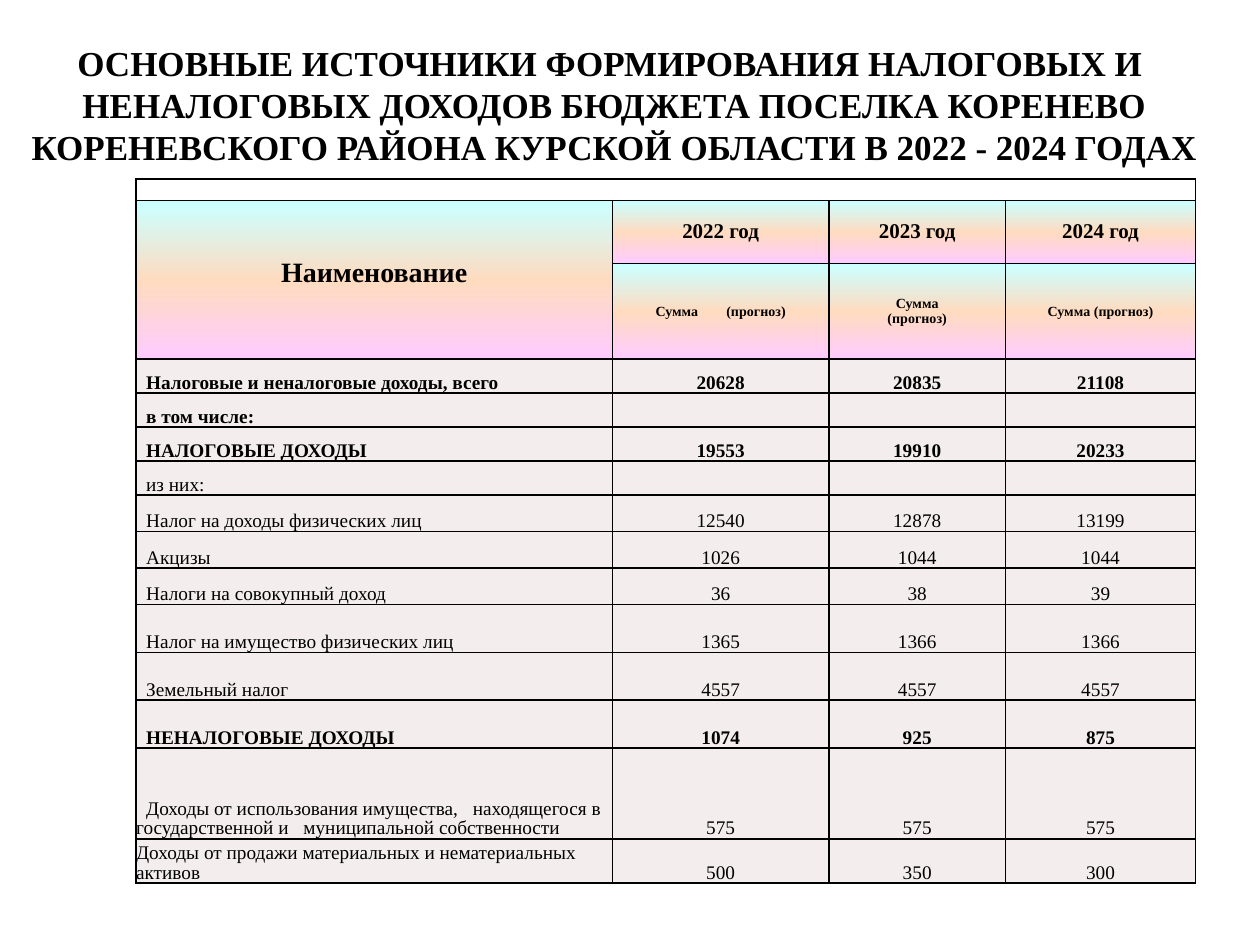
from lxml.etree import SubElement
from pptx import Presentation
from pptx.dml.color import RGBColor
from pptx.enum.text import MSO_ANCHOR, PP_ALIGN
from pptx.oxml import parse_xml
from pptx.oxml.ns import nsdecls, qn
from pptx.util import Inches, Pt

BLACK = RGBColor(0x00, 0x00, 0x00)
PALE = RGBColor(0xF3, 0xEE, 0xED)
PINK = RGBColor(0xFF, 0xCC, 0xFF)
PEACH = RGBColor(0xFF, 0xDB, 0xC0)
CYAN = RGBColor(0xCC, 0xFF, 0xFF)

FONT = "Times New Roman"
TITLE = ("ОСНОВНЫЕ ИСТОЧНИКИ ФОРМИРОВАНИЯ НАЛОГОВЫХ И \v"
         "НЕНАЛОГОВЫХ ДОХОДОВ БЮДЖЕТА ПОСЕЛКА КОРЕНЕВО "
         "КОРЕНЕВСКОГО РАЙОНА КУРСКОЙ ОБЛАСТИ В 2022 - 2024 ГОДАХ")
YEARS = ["2022 год", "2023 год", "2024 год"]
SUMS = ["Сумма|(прогноз)", "Сумма\n(прогноз)", "Сумма (прогноз)"]
WIDTHS = [3.78, 1.72, 1.4, 1.51]
HEADS = [0.17, 0.5, 0.76]
EMPTY = ["", "", ""]
ROWS = [
    (0.27, True, "Налоговые и неналоговые доходы, всего", [20628, 20835, 21108]),
    (0.27, True, "в том числе:", EMPTY),
    (0.27, True, "НАЛОГОВЫЕ ДОХОДЫ", [19553, 19910, 20233]),
    (0.27, False, "из них:", EMPTY),
    (0.29, False, "Налог на доходы физических лиц", [12540, 12878, 13199]),
    (0.29, False, "Акцизы", [1026, 1044, 1044]),
    (0.29, False, "Налоги на совокупный доход", [36, 38, 39]),
    (0.38, False, "Налог на имущество физических лиц", [1365, 1366, 1366]),
    (0.38, False, "Земельный налог", [4557, 4557, 4557]),
    (0.38, True, "НЕНАЛОГОВЫЕ ДОХОДЫ", [1074, 925, 875]),
    (0.72, False, "Доходы от использования имущества,|находящегося в "
     "государственной и|муниципальной собственности", [575, 575, 575]),
    (0.35, False, "Доходы от продажи материальных и нематериальных активов",
     [500, 350, 300]),
]


def style(font, size, bold):
    """Give a font the face, size, weight and colour of this slide."""
    looks = {"name": FONT, "size": Pt(size), "bold": bold}
    for key, val in looks.items():
        setattr(font, key, val)
    font.color.rgb = BLACK


def add_run(para, text, size, bold, gap=0):
    """Add a run, with extra letter spacing in points where a gap is wanted."""
    run = para.add_run()
    run.text = text
    style(run.font, size, bold)
    if gap:
        run.font._element.set("spc", str(int(gap * 100)))


def write(cell, text, size, bold, align, space=1.0, indent=0, gap=0):
    """Write text in a cell, with a wide gap at each bar."""
    frame = cell.text_frame
    for num, line in enumerate(str(text).split("\n")):
        para = frame.add_paragraph() if num else frame.paragraphs[0]
        para.alignment = align
        para.line_spacing = space
        if indent:
            para._p.get_or_add_pPr().set("indent", str(Inches(indent)))
        for pos, part in enumerate(line.split("|")):
            if pos:
                add_run(para, " ", size, bold, gap)
            if part:
                add_run(para, part, size, bold)
        if not line:
            SubElement(para._p, qn("a:endParaRPr")).set("sz", str(size * 100))


def blend(cell):
    """Fill a cell with the three-colour gradient, rising from the foot."""
    stops = "".join(
        f'<a:gs pos="{pos * 1000}"><a:srgbClr val="{tone}"/></a:gs>'
        for pos, tone in [(0, PINK), (49, PEACH), (98, CYAN)])
    cell._tc.get_or_add_tcPr().append(parse_xml(
        f'<a:gradFill {nsdecls("a")} rotWithShape="1"><a:gsLst>{stops}</a:gsLst>'
        '<a:lin ang="16200000" scaled="1"/></a:gradFill>'))


def frame_cell(cell, anchor):
    """Clear the margins of a cell and rule its four sides."""
    for side in ("left", "right", "top", "bottom"):
        setattr(cell, f"margin_{side}", 0)
    cell.vertical_anchor = anchor
    props = cell._tc.get_or_add_tcPr()
    for num, side in enumerate("LRTB"):
        props.insert(num, parse_xml(
            f'<a:ln{side} {nsdecls("a")} w="12700"><a:solidFill>'
            f'<a:srgbClr val="{BLACK}"/></a:solidFill></a:ln{side}>'))


def add_title(slide):
    """Place and format the title."""
    title = slide.shapes.title
    place = {"left": 0, "top": 0.08, "width": 9.75, "height": 1.5}
    for key, val in place.items():
        setattr(title, key, Inches(val))
    frame = title.text_frame
    frame.word_wrap = True
    frame.vertical_anchor = MSO_ANCHOR.MIDDLE
    frame.text = TITLE
    para = frame.paragraphs[0]
    para.alignment = PP_ALIGN.CENTER
    for run in para.runs:
        style(run.font, 20, True)


def fill_head(table):
    """Fill the blank top row and the two header rows."""
    for cell in table.rows[0].cells:
        cell.fill.background()
        write(cell, "", 8, False, PP_ALIGN.CENTER)
        frame_cell(cell, MSO_ANCHOR.MIDDLE)
    texts = [(["Наименование"] + YEARS, 12), ([""] + SUMS, 8)]
    for row, (line, size) in enumerate(texts, 1):
        for col, text in enumerate(line):
            cell = table.cell(row, col)
            write(cell, text, size if col else 16, True, PP_ALIGN.CENTER, gap=14)
            blend(cell)
            frame_cell(cell, MSO_ANCHOR.MIDDLE)
    table.cell(0, 0).merge(table.cell(0, 3))
    name = table.cell(1, 0)
    name.merge(table.cell(2, 0))
    name.margin_bottom = Inches(0.11)


def fill_body(table):
    """Fill the rows of income."""
    last = len(ROWS) - 1
    for num, (_, bold, name, sums) in enumerate(ROWS):
        for col, text in enumerate([name] + sums):
            cell = table.cell(num + len(HEADS), col)
            align = PP_ALIGN.CENTER if col else PP_ALIGN.LEFT
            indent = 0 if col or num == last else 0.08
            write(cell, text, 11, bold, align, 0.9, indent, 5.5)
            cell.fill.solid()
            cell.fill.fore_color.rgb = PALE
            frame_cell(cell, MSO_ANCHOR.BOTTOM)


def add_grid(slide):
    """Add the table of income by year."""
    highs = HEADS + [row[0] for row in ROWS]
    table = slide.shapes.add_table(
        len(highs), len(WIDTHS), Inches(1.08), Inches(1.42),
        Inches(sum(WIDTHS)), Inches(sum(highs))).table
    table.first_row = table.horz_banding = False
    for col, wide in zip(table.columns, WIDTHS):
        col.width = Inches(wide)
    for row, high in zip(table.rows, highs):
        row.height = Inches(high)
    fill_head(table)
    fill_body(table)


def main():
    """Build the slide and save it."""
    deck = Presentation()
    deck.slide_width, deck.slide_height = Inches(10), Inches(7.5)
    slide = deck.slides.add_slide(deck.slide_layouts[5])
    add_title(slide)
    add_grid(slide)
    deck.save("out.pptx")


if __name__ == "__main__":
    main()
